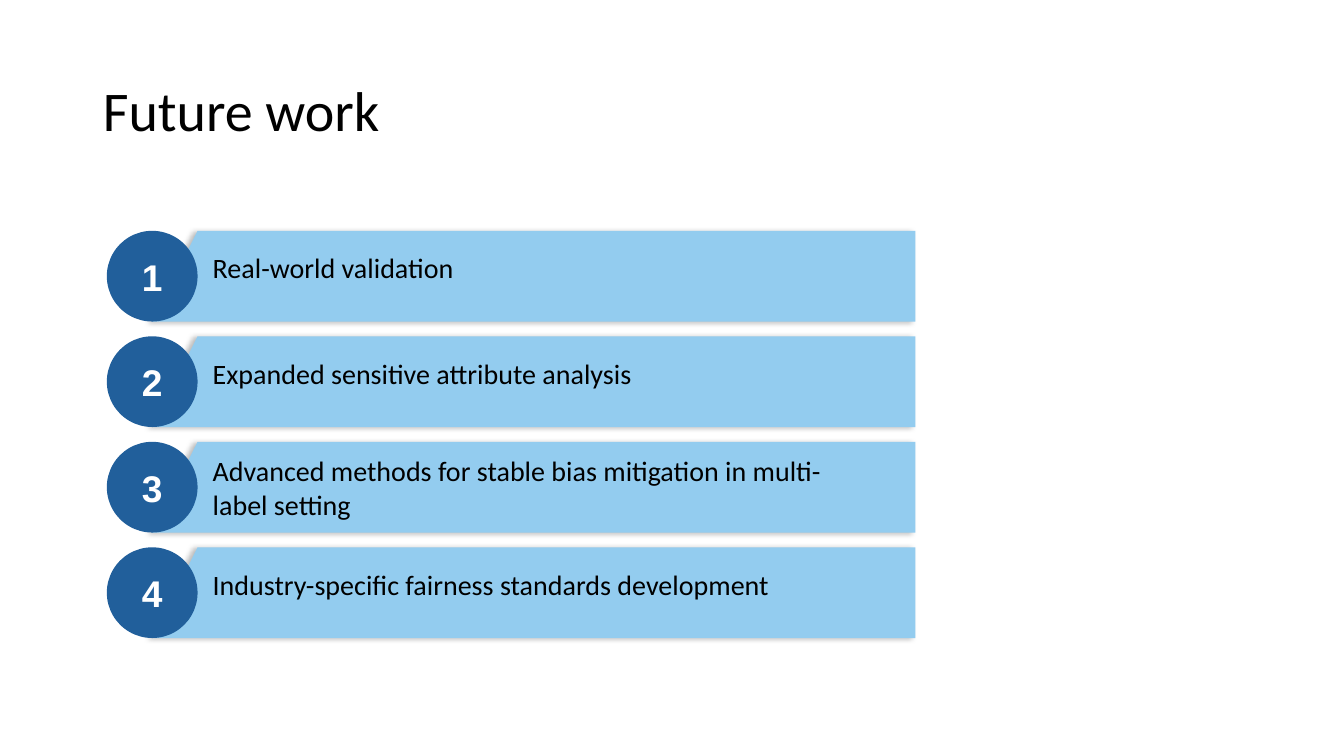
from dataclasses import dataclass

from lxml.etree import SubElement
from pptx import Presentation
from pptx.dml.color import RGBColor as Rgb
from pptx.enum.shapes import MSO_SHAPE as Shape
from pptx.enum.text import MSO_ANCHOR as Anchor, MSO_AUTO_SIZE as AutoSize, PP_ALIGN as Align
from pptx.oxml.ns import qn
from pptx.util import Inches, Pt


@dataclass(frozen=True)
class Theme:
    ink: str = "000000"
    paper: str = "FFFFFF"
    bar: str = "93CCEF"
    badge: str = "215F9B"
    body_font: str = "Calibri"
    badge_font: str = "Arial"
    title_size: float = 40
    item_size: float = 20
    badge_size: float = 26.5


@dataclass(frozen=True)
class Box:
    left: float
    top: float
    width: float
    height: float

    def inches(self):
        return [Inches(n) for n in (self.left, self.top, self.width, self.height)]


THEME = Theme()
TITLE_BOX = Box(0.92, 0.4, 11.5, 1.45)
LIST_BOX = Box(1.06, 2.29, 8.02, 4.04)
ROW_HEIGHT = 0.9
TEXT_GAP, TEXT_WIDTH = 0.15, 6.36
LINE_HEIGHT = 0.34
# Wording and number of text lines of each item
ITEMS = [
    ("Real-world validation", 1),
    ("Expanded sensitive attribute analysis", 1),
    ("Advanced methods for stable bias mitigation in multi-label setting", 2),
    ("Industry-specific fairness standards development", 1),
]
TEXT_DROP = {1: 0.2, 2: 0.12}


def add_run(para, text, font, size, color, bold=False):
    span = para.add_run()
    span.text = text
    span.font.name, span.font.size, span.font.bold = font, Pt(size), bold
    span.font.color.rgb = Rgb.from_string(color)


def clear_margins(frame):
    frame.margin_left = frame.margin_right = frame.margin_top = frame.margin_bottom = 0


def paint(shape, color):
    shape.fill.solid()
    shape.fill.fore_color.rgb = Rgb.from_string(color)
    shape.line.fill.background()
    shape.shadow.inherit = False


def cast_shadow(shape):
    """Give the shape a soft shadow to its left."""
    effects = shape._element.spPr.find(qn("a:effectLst"))
    shadow = SubElement(effects, qn("a:outerShdw"), blurRad=str(Pt(4)), dist=str(Pt(3)),
                        dir="10800000", algn="r", rotWithShape="0")
    color = SubElement(shadow, qn("a:srgbClr"), val=THEME.ink)
    SubElement(color, qn("a:alpha"), val="25000")


def add_title(page, box, text):
    title = page.shapes.title
    title.left, title.top, title.width, title.height = box.inches()
    title.text_frame.vertical_anchor = Anchor.MIDDLE
    para = title.text_frame.paragraphs[0]
    para.alignment, para.line_spacing = Align.LEFT, 0.9
    add_run(para, text, THEME.body_font, THEME.title_size, THEME.ink)


def add_bar(shapes, box):
    """Draw a bar whose slanted left end starts under the badge."""
    right, bottom = box.left + box.width, box.top + box.height
    corners = [(box.left + box.height, box.top), (right, box.top),
               (right, bottom), (box.left + box.height / 2, bottom)]
    points = [(Inches(x), Inches(y)) for x, y in corners]
    builder = shapes.build_freeform(*points[0], scale=1.0)
    builder.add_line_segments(points[1:], close=True)
    bar = builder.convert_to_shape()
    paint(bar, THEME.bar)
    cast_shadow(bar)


def add_badge(shapes, box, number):
    badge = shapes.add_shape(Shape.OVAL, *box.inches())
    paint(badge, THEME.badge)
    frame = badge.text_frame
    clear_margins(frame)
    frame.vertical_anchor = Anchor.MIDDLE
    para = frame.paragraphs[0]
    para.alignment = Align.CENTER
    add_run(para, str(number), THEME.badge_font, THEME.badge_size, THEME.paper, bold=True)


def add_item_text(shapes, box, text):
    frame = shapes.add_textbox(*box.inches()).text_frame
    clear_margins(frame)
    frame.word_wrap = True
    frame.auto_size = AutoSize.SHAPE_TO_FIT_TEXT
    add_run(frame.paragraphs[0], text, THEME.body_font, THEME.item_size, THEME.ink)


def add_item(page, box, number, text, lines):
    shapes = page.shapes.add_group_shape().shapes
    add_bar(shapes, box)
    add_badge(shapes, Box(box.left, box.top, box.height, box.height), number)
    text_box = Box(box.left + box.height + TEXT_GAP, box.top + TEXT_DROP[lines],
                   TEXT_WIDTH, lines * LINE_HEIGHT)
    add_item_text(shapes, text_box, text)


def add_numbered_list(page, box, items):
    pitch = (box.height - ROW_HEIGHT) / (len(items) - 1)
    for index, (text, lines) in enumerate(items):
        row = Box(box.left, box.top + index * pitch, box.width, ROW_HEIGHT)
        add_item(page, row, index + 1, text, lines)


def main():
    deck = Presentation()
    deck.slide_width, deck.slide_height = Inches(13.33), Inches(7.5)
    page = deck.slides.add_slide(deck.slide_layouts.get_by_name("Title Only"))
    add_title(page, TITLE_BOX, "Future work")
    add_numbered_list(page, LIST_BOX, ITEMS)
    deck.save("out.pptx")


if __name__ == "__main__":
    main()
